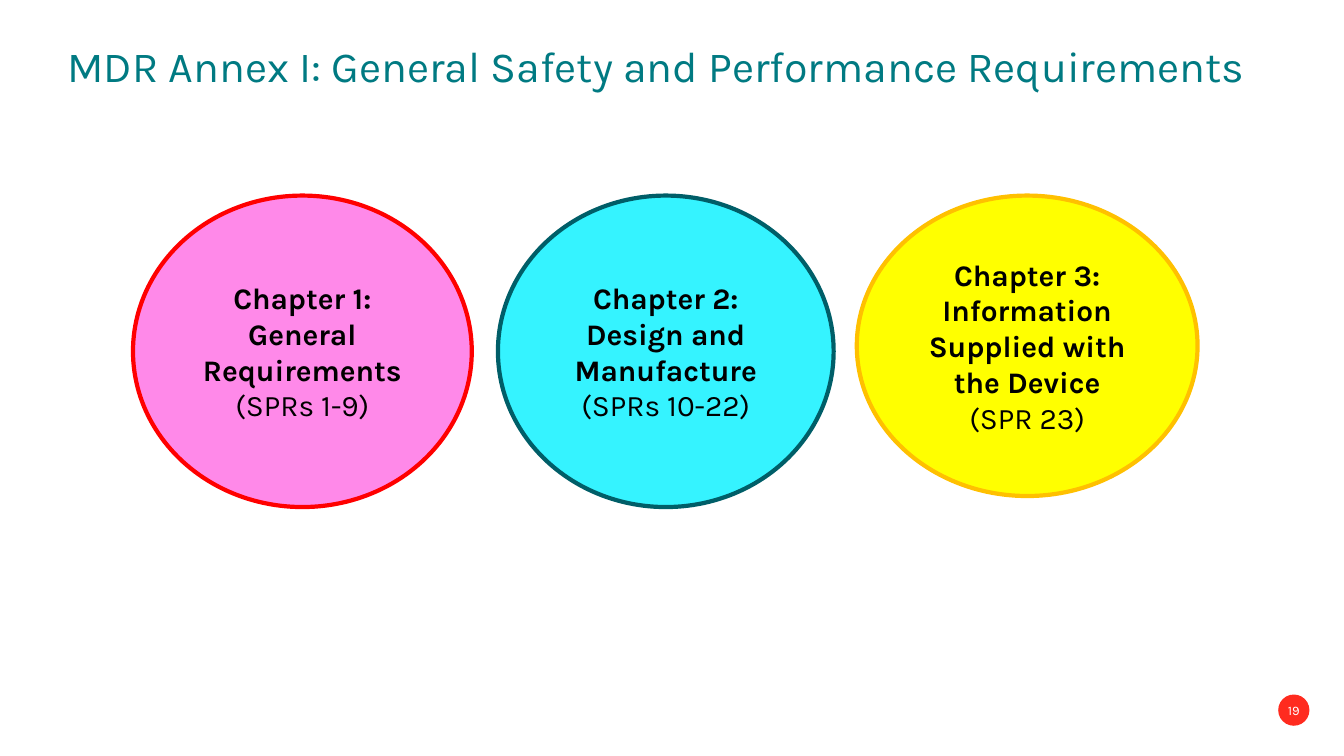
from pptx import Presentation
from pptx.dml.color import RGBColor
from pptx.enum.shapes import MSO_SHAPE as Kind
from pptx.enum.text import MSO_ANCHOR as Anchor, PP_ALIGN as Align
from pptx.util import Pt


def paint(item, tint):
    item.rgb = RGBColor.from_string(tint)


def style(para, size, tint, bold=False):
    for run in para.runs:
        font = run.font
        font.name, font.size, font.bold = "Karla", Pt(size), bold
        paint(font.color, tint)


deck = Presentation()
deck.slide_width, deck.slide_height = Pt(960), Pt(540)
slide = deck.slides.add_slide(deck.slide_layouts[5])

# Title
title = slide.shapes.title
title.left, title.top, title.width, title.height = Pt(48.2), Pt(30.2), Pt(875.5), Pt(38.2)
frame = title.text_frame
frame.margin_left = frame.margin_right = frame.margin_top = frame.margin_bottom = 0
frame.vertical_anchor = Anchor.MIDDLE
frame.word_wrap = True
frame.text = "MDR Annex I: General Safety and Performance Requirements"
head = frame.paragraphs[0]
head.alignment, head.line_spacing = Align.LEFT, 0.9
style(head, 30.7, "007A82")

# Chapter ovals and page badge: box, fill, line, margin, size, texts with bold flag
ovals = [
    ((95, 139.7, 242, 222.5), "FF89E9", "FF0000", 7.2, 21.3,
     [("Chapter 1: General Requirements", True), ("(SPRs 1-9)", False)]),
    ((355.7, 139.7, 239.8, 222.5), "35F3FF", "005E68", 7.2, 21.3,
     [("Chapter 2: Design and Manufacture", True), ("(SPRs 10-22)", False)]),
    ((612, 139.7, 243.4, 214.6), "FFFF00", "FFC000", 7.2, 21.3,
     [("Chapter 3: Information Supplied with the Device", True), ("(SPR 23)", False)]),
    ((913, 496.1, 22.3, 22.3), "FF2B1F", None, 0, 9.3, [("19", False)]),
]
for box, fill, edge, pad, size, texts in ovals:
    oval = slide.shapes.add_shape(Kind.OVAL, *map(Pt, box))
    oval.shadow.inherit = False
    oval.fill.solid()
    paint(oval.fill.fore_color, fill)
    if edge:
        paint(oval.line.color, edge)
        oval.line.width = Pt(3)
    else:
        oval.line.fill.background()
    frame = oval.text_frame
    frame.word_wrap = True
    frame.vertical_anchor = Anchor.MIDDLE
    frame.margin_left = frame.margin_right = Pt(pad)
    frame.margin_top = frame.margin_bottom = Pt(pad / 2)
    frame.text = "\n".join(text for text, bold in texts)
    for para, (text, bold) in zip(frame.paragraphs, texts):
        para.alignment = Align.CENTER
        style(para, size, "000000" if edge else "FFFFFF", bold)

deck.save("out.pptx")
